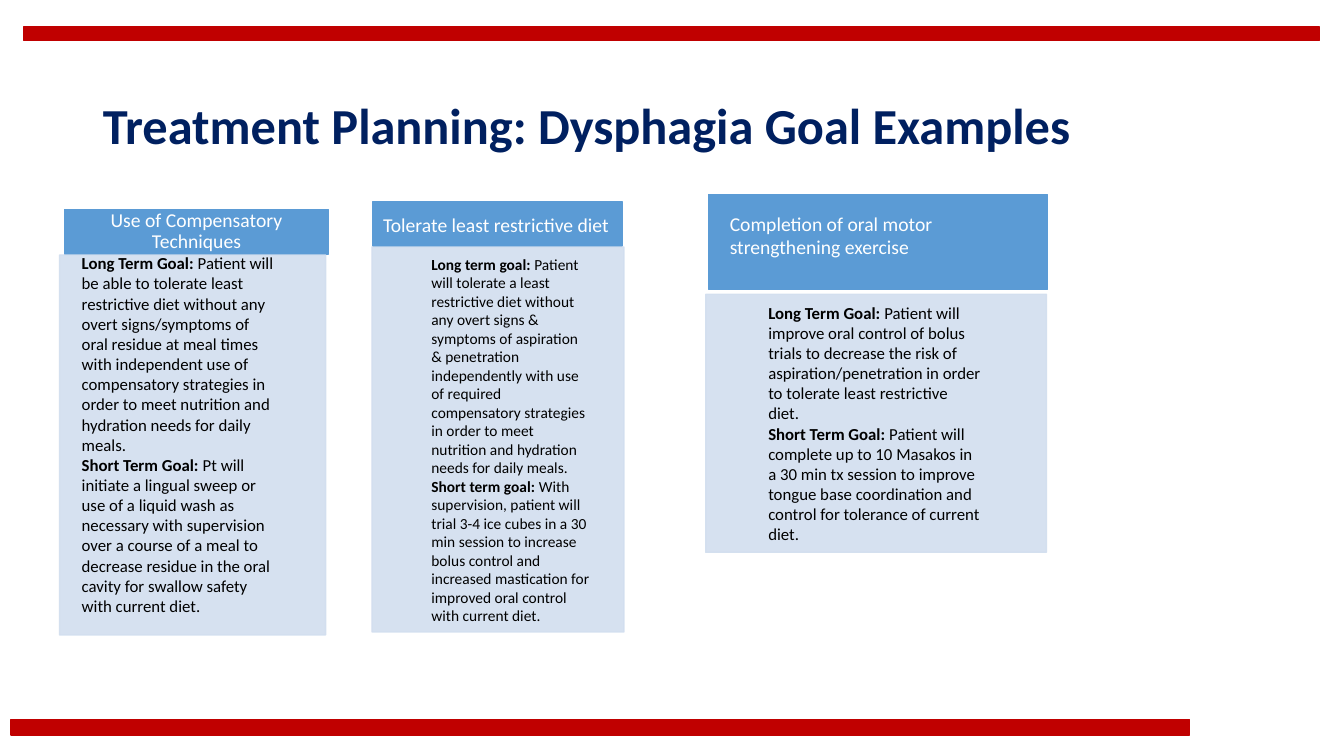
from dataclasses import dataclass
from typing import NamedTuple

from lxml.etree import SubElement
from pptx import Presentation
from pptx.dml.color import RGBColor
from pptx.enum.shapes import MSO_SHAPE
from pptx.enum.text import MSO_ANCHOR, MSO_AUTO_SIZE, PP_ALIGN
from pptx.oxml.ns import qn
from pptx.util import Inches, Pt

SLIDE_WIDTH, SLIDE_HEIGHT = Inches(13.33), Inches(7.5)
FONT = "Calibri"
RED, NAVY, BLUE, PALE = "C00000", "002060", "5B9BD5", "D2DEEF"
WHITE, BLACK = "FFFFFF", "000000"


class Area(NamedTuple):
    """Left, top, width and height in percent of the slide's size."""
    left: float
    top: float
    width: float
    height: float

    def emu(self) -> tuple[int, int, int, int]:
        return (int(SLIDE_WIDTH * self.left / 100), int(SLIDE_HEIGHT * self.top / 100),
                int(SLIDE_WIDTH * self.width / 100), int(SLIDE_HEIGHT * self.height / 100))


class Insets(NamedTuple):
    """Text margins in inches."""
    left: float = 0.1
    top: float = 0.05
    right: float = 0.1
    bottom: float = 0.05


class Goal(NamedTuple):
    label: str
    wording: str


@dataclass
class GoalColumn:
    heading: str
    heading_band: Area
    heading_area: Area
    panel: Area
    goals_area: Area
    goals: list[Goal]
    goal_size: int = 12
    goal_insets: Insets = Insets(0.08, 0.08, 0.11, 0.12)
    heading_insets: Insets = Insets()
    heading_centred: bool = False


BARS = [Area(0.83, 95.2, 87.7, 2), Area(1.73, 3.6, 96.47, 1.73)]
TITLE_AREA = Area(6.9, 7.33, 86.27, 19.33)

COLUMNS = [
    GoalColumn(
        "Use of Compensatory Techniques",
        Area(4.8, 27.73, 19.65, 5.87), Area(4.8, 27.73, 19.65, 5.87),
        Area(4.43, 33.73, 19.8, 50.27), Area(1.73, 32.4, 19.8, 50.27),
        [Goal("Long Term Goal: ",
              "Patient will be able to tolerate least restrictive diet without any overt "
              "signs/symptoms of oral residue at meal times with independent use of "
              "compensatory strategies in order to meet nutrition and hydration needs "
              "for daily meals."),
         Goal("Short Term Goal: ",
              "Pt will initiate a lingual sweep or use of a liquid wash as necessary with "
              "supervision over a course of a meal to decrease residue in the oral cavity "
              "for swallow safety with current diet.")],
        heading_insets=Insets(0.11, 0.06, 0.11, 0.06), heading_centred=True),
    GoalColumn(
        "Tolerate least restrictive diet",
        Area(27.76, 26.67, 18.53, 5.87), Area(27.76, 27.47, 19.43, 4.53),
        Area(27.68, 32.67, 18.75, 50.93), Area(27.61, 33.07, 17.1, 50.67),
        [Goal("Long term goal: ",
              "Patient will tolerate a least restrictive diet without any overt signs & "
              "symptoms of aspiration & penetration independently with use of required "
              "compensatory strategies in order to meet nutrition and hydration needs "
              "for daily meals."),
         Goal("Short term goal: ",
              "With supervision, patient will trial 3-4 ice cubes in a 30 min session to "
              "increase bolus control and increased mastication for improved oral control "
              "with current diet.")],
        goal_size=11, goal_insets=Insets()),
    GoalColumn(
        "Completion of oral motor strengthening exercise",
        Area(52.74, 25.73, 25.21, 12.53), Area(53.56, 27.33, 29.26, 7.6),
        Area(52.51, 38.93, 25.36, 34.13), Area(52.81, 38.93, 21.08, 34.13),
        [Goal("Long Term Goal: ",
              "Patient will improve oral control of bolus trials to decrease the risk of "
              "aspiration/penetration in order to tolerate least restrictive diet."),
         Goal("Short Term Goal: ",
              "Patient will complete up to 10 Masakos in a 30 min tx session to improve "
              "tongue base coordination and control for tolerance of current diet.")],
        heading_insets=Insets(right=1.4)),
]


def colour(value: str) -> RGBColor:
    return RGBColor.from_string(value)


def add_block(slide, area: Area, fill: str, opacity: int = 100) -> None:
    block = slide.shapes.add_shape(MSO_SHAPE.RECTANGLE, *area.emu())
    block.shadow.inherit = False
    block.fill.solid()
    block.fill.fore_color.rgb = colour(fill)
    block.line.color.rgb = colour(fill)
    block.line.width = Pt(1)
    if opacity < 100:
        for tint in block.fill._xPr.iter(qn("a:srgbClr")):
            SubElement(tint, qn("a:alpha")).set("val", str(opacity * 1000))


def add_run(paragraph, text: str, size: int, shade: str, bold: bool = False) -> None:
    run = paragraph.add_run()
    run.text = text
    run.font.name, run.font.size, run.font.bold = FONT, Pt(size), bold
    run.font.color.rgb = colour(shade)


def add_frame(slide, area: Area, insets: Insets):
    frame = slide.shapes.add_textbox(*area.emu()).text_frame
    frame.word_wrap = True
    frame.margin_left, frame.margin_top = Inches(insets.left), Inches(insets.top)
    frame.margin_right, frame.margin_bottom = Inches(insets.right), Inches(insets.bottom)
    return frame


def add_title(slide, text: str) -> None:
    title = slide.shapes.title
    title.left, title.top, title.width, title.height = TITLE_AREA.emu()
    frame = title.text_frame
    frame.auto_size = MSO_AUTO_SIZE.NONE
    frame.vertical_anchor = MSO_ANCHOR.MIDDLE
    line = frame.paragraphs[0]
    line.alignment, line.line_spacing = PP_ALIGN.LEFT, 0.9
    add_run(line, text, 36, NAVY, bold=True)


def add_heading(slide, column: GoalColumn) -> None:
    frame = add_frame(slide, column.heading_area, column.heading_insets)
    line = frame.paragraphs[0]
    if column.heading_centred:
        frame.vertical_anchor = MSO_ANCHOR.MIDDLE
        line.alignment, line.line_spacing = PP_ALIGN.CENTER, 0.9
    add_run(line, column.heading, 14, WHITE)


def add_goals(slide, column: GoalColumn) -> None:
    frame = add_frame(slide, column.goals_area, column.goal_insets)
    for index, goal in enumerate(column.goals):
        paragraph = frame.add_paragraph() if index else frame.paragraphs[0]
        paragraph.level = 1
        properties = paragraph._p.get_or_add_pPr()
        properties.set("marL", str(Inches(0.5)))
        properties.set("indent", "0")
        add_run(paragraph, goal.label, column.goal_size, BLACK, bold=True)
        add_run(paragraph, goal.wording, column.goal_size, BLACK)


def main() -> None:
    deck = Presentation()
    deck.slide_width, deck.slide_height = SLIDE_WIDTH, SLIDE_HEIGHT
    slide = deck.slides.add_slide(deck.slide_layouts[5])

    # Red bars and title
    for bar in BARS:
        add_block(slide, bar, RED)
    add_title(slide, "Treatment Planning: Dysphagia Goal Examples")

    # Goal columns
    for column in COLUMNS:
        add_block(slide, column.heading_band, BLUE)
        add_block(slide, column.panel, PALE, opacity=90)
        add_heading(slide, column)
        add_goals(slide, column)

    deck.save("out.pptx")


if __name__ == "__main__":
    main()
